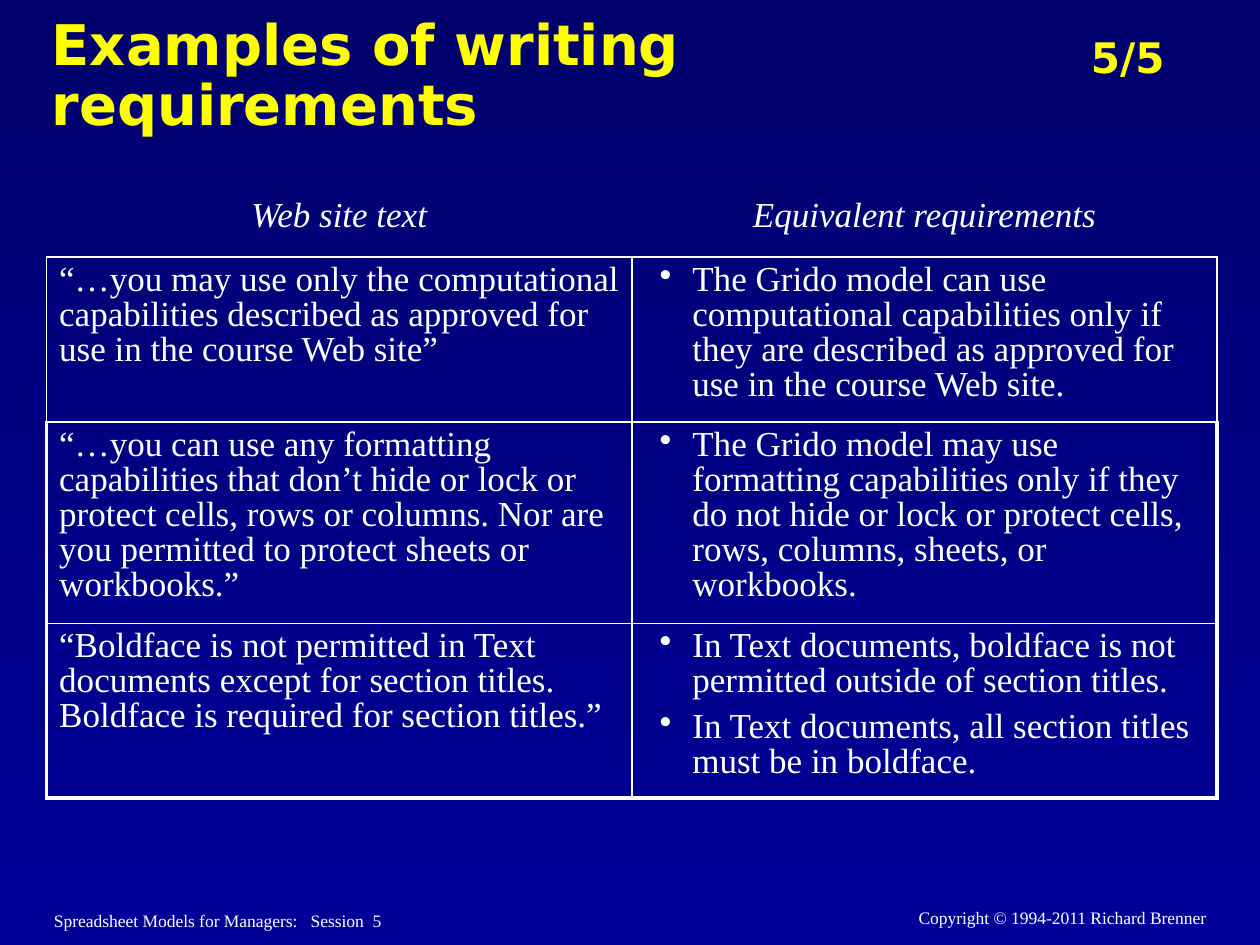
from dataclasses import dataclass

from lxml import etree
from pptx import Presentation
from pptx.dml.color import RGBColor
from pptx.enum import text as tx
from pptx.oxml import ns
from pptx.util import Inches, Pt


@dataclass(frozen=True)
class Theme:
    sans: str = "DejaVu Sans"
    serif: str = "Times New Roman"
    white: str = "FFFFFF"
    gold: str = "FFFF00"
    navy: str = "000099"
    shade: str = "46275"
    head: int = 32
    page: int = 24
    body: int = 20
    foot: int = 10
    thin: float = 1
    thick: float = 2.25


T = Theme()
LEFT, MID, RIGHT = tx.PP_ALIGN.LEFT, tx.PP_ALIGN.CENTER, tx.PP_ALIGN.RIGHT
HEADS = ["Web site text", "Equivalent requirements"]
ROWS = [
    ("“…you may use only the computational capabilities described as "
     "approved for use in the course Web site”",
     ["The Grido model can use computational capabilities only if they are "
      "described as approved for use in the course Web site."]),
    ("“…you can use any formatting capabilities that don’t hide or lock or "
     "protect cells, rows or columns. Nor are you permitted to protect "
     "sheets or workbooks.”",
     ["The Grido model may use formatting capabilities only if they do not "
      "hide or lock or protect cells, rows, columns, sheets, or workbooks."]),
    ("“Boldface is not permitted in Text documents except for section "
     "titles. Boldface is required for section titles.”",
     ["In Text documents, boldface is not permitted outside of section "
      "titles.",
      "In Text documents, all section titles must be in boldface."]),
]


def add(node, tag, **attrs):
    return etree.SubElement(node, ns.qn(tag), **attrs)


def write(para, words, size, face=T.serif, color=T.white, bold=False,
          slant=False, align=LEFT):
    para.alignment = align
    run = para.add_run()
    run.text = words
    font = run.font
    font.name, font.size = face, Pt(size)
    font.bold, font.italic = bold, slant
    font.color.rgb = RGBColor.from_string(color)


def bullet(para):
    props = para._p.get_or_add_pPr()
    props.set("marL", str(Inches(0.38)))
    props.set("indent", str(Inches(-0.26)))
    add(props, "a:buChar", char="•")


def edge(cell, **sides):
    props = cell._tc.get_or_add_tcPr()
    for side in "LRTB":
        width = sides.get(side, 0)
        line = add(props, f"a:ln{side}", w=str(Pt(width)))
        if width:
            fill = add(line, "a:solidFill")
            add(fill, "a:srgbClr", val=T.white)
        else:
            add(line, "a:noFill")
    cell.fill.background()


def fill_cell(cell, items, listed=False, **style):
    frame = cell.text_frame
    for i, words in enumerate(items):
        para = frame.add_paragraph() if i else frame.paragraphs[0]
        if listed:
            bullet(para)
        para.line_spacing = 0.9
        if i:
            para.space_before = Pt(6)
        write(para, words, T.body, **style)


def backdrop(slide):
    fill = slide.background.fill
    fill.gradient()
    fill.gradient_angle = 270
    for stop, place in zip(fill.gradient_stops, (0, 1)):
        stop.color.rgb = RGBColor.from_string(T.navy)
        stop.position = place
    color = next(slide.element.iter(ns.qn("a:srgbClr")))
    add(color, "a:shade", val=T.shade)


def title(slide, box):
    shape = slide.shapes.title
    shape.left, shape.top, shape.width, shape.height = map(Inches, box)
    frame = shape.text_frame
    frame.auto_size = tx.MSO_AUTO_SIZE.NONE
    frame.vertical_anchor = tx.MSO_ANCHOR.MIDDLE
    para = frame.paragraphs[0]
    para.line_spacing = 0.9
    write(para, "Examples of writing requirements", T.head, T.sans, T.gold,
          bold=True)


def label(slide, box, words, size, **style):
    frame = slide.shapes.add_textbox(*map(Inches, box)).text_frame
    frame.word_wrap = True
    write(frame.paragraphs[0], words, size, **style)


def grid(slide, box):
    count = len(ROWS) + 1
    table = slide.shapes.add_table(count, 2, *map(Inches, box)).table
    table.first_row = table.horz_banding = False
    for col in table.columns:
        col.width = Inches(box[2] / 2)
    for i, row in enumerate(table.rows):
        row.height = Inches(1.31 if i else 0.51)
    for j, words in enumerate(HEADS):
        cell = table.cell(0, j)
        fill_cell(cell, [words], slant=True, align=MID)
        edge(cell, B=T.thin)
    for i, (quote, rules) in enumerate(ROWS, 1):
        side = T.thick if i > 1 else T.thin
        base = T.thick if i == len(ROWS) else T.thin
        left, right = table.cell(i, 0), table.cell(i, 1)
        fill_cell(left, [quote])
        fill_cell(right, rules, listed=True)
        edge(left, L=side, R=T.thin, T=T.thin, B=base)
        edge(right, L=T.thin, R=side, T=T.thin, B=base)


def main():
    deck = Presentation()
    deck.slide_width, deck.slide_height = Inches(10), Inches(7.5)
    slide = deck.slides.add_slide(deck.slide_layouts[5])
    backdrop(slide)
    label(slide, (0.33, 7.17, 5.55, 0.26),
          "Spreadsheet Models for Managers:   Session  5", T.foot)
    label(slide, (8.56, 0.2, 1.32, 0.5), "5/5", T.page, face=T.sans,
          color=T.gold, bold=True)
    label(slide, (6.52, 7.15, 3.15, 0.26),
          "Copyright © 1994-2011 Richard Brenner", T.foot, align=RIGHT)
    title(slide, (0.31, 0.15, 7.69, 0.93))
    grid(slide, (0.37, 1.53, 9.29, 4.44))
    deck.save("out.pptx")


if __name__ == "__main__":
    main()
